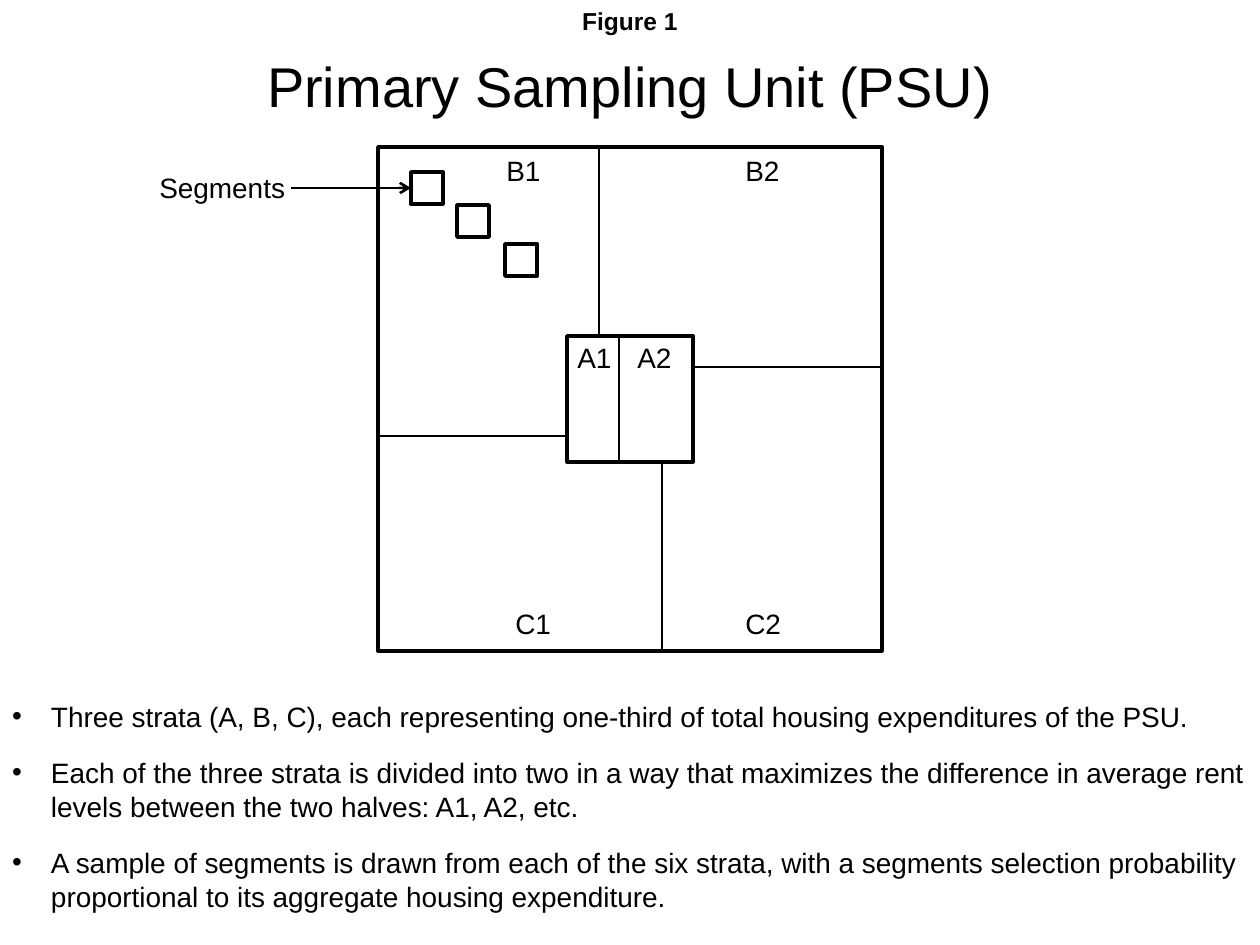
"""Build the Figure 1 slide: a primary sampling unit divided into strata and segments."""
import pptx
import pptx.dml.color
import pptx.enum.shapes
import pptx.enum.text
import pptx.oxml.ns
import pptx.util
from lxml import etree

BLACK = pptx.dml.color.RGBColor(0, 0, 0)
FONT = "Arial"
PX = 914400 / 126
ALIGN = pptx.enum.text.PP_ALIGN

FIGURE = ("Figure 1", (0, 0, 1260, 42))
TITLE = ("Primary Sampling Unit (PSU)", (0, 45, 1260, 79))
NOTES_BOX = (0, 693, 1260, 229)
NOTES = [
    "Three strata (A, B, C), each representing one-third of total housing expenditures of the PSU.",
    "Each of the three strata is divided into two in a way that maximizes the difference "
    "in average rent levels between the two halves: A1, A2, etc.",
    "A sample of segments is drawn from each of the six strata, with a segments selection "
    "probability proportional to its aggregate housing expenditure.",
]
NOTE_INDENT = 39

UNIT = (378, 147, 504, 504)
CORE = (567, 336, 126, 126)
SEGMENT_SIZE = 32
SEGMENT_CORNERS = [(411, 172), (457, 205), (505, 244)]
DIVIDERS = [
    (599, 147, 599, 336),
    (662, 462, 662, 651),
    (882, 367, 693, 367),
    (567, 436, 378, 436),
    (619, 336, 619, 462),
]
LABEL_HEIGHT = 47
LABELS = [
    ("Segments", 147, 164, 178),
    ("B1", 494, 147, 74),
    ("B2", 733, 147, 62),
    ("C2", 733, 600, 62),
    ("C1", 503, 600, 62),
    ("A1", 565, 334, 62),
    ("A2", 625, 334, 62),
]
ARROW_START = 291


def px(*lengths):
    return [round(length * PX) for length in lengths]


def write(shape, box, lines, size=16, bold=False, align=ALIGN.LEFT, gap=0):
    shape.left, shape.top, shape.width, shape.height = px(*box)
    frame = shape.text_frame
    frame.word_wrap = True
    frame.auto_size = pptx.enum.text.MSO_AUTO_SIZE.NONE
    frame.vertical_anchor = pptx.enum.text.MSO_ANCHOR.TOP
    frame.text = "\n".join(lines)
    for index, paragraph in enumerate(frame.paragraphs):
        paragraph.alignment = align
        paragraph.space_before = pptx.util.Pt(gap if index else 0)
        font = paragraph.runs[0].font
        font.name, font.size, font.bold = FONT, pptx.util.Pt(size), bold
        font.color.rgb = BLACK
    return frame


def add_box(shapes, box):
    rectangle = shapes.add_shape(pptx.enum.shapes.MSO_SHAPE.RECTANGLE, *px(*box))
    rectangle.shadow.inherit = False
    rectangle.fill.background()
    rectangle.line.color.rgb = BLACK
    rectangle.line.width = pptx.util.Pt(2)
    return rectangle


def add_line(shapes, ends):
    line = shapes.add_connector(pptx.enum.shapes.MSO_CONNECTOR.STRAIGHT, *px(*ends))
    line.line.color.rgb = BLACK
    line.line.width = pptx.util.Pt(1.5)
    etree.SubElement(line._element.spPr, pptx.oxml.ns.qn("a:effectLst"))
    return line


def add_bullets(frame):
    for paragraph in frame.paragraphs:
        properties = paragraph._p.get_or_add_pPr()
        indent = px(NOTE_INDENT)[0]
        properties.set("marL", str(indent))
        properties.set("indent", str(-indent))
        etree.SubElement(properties, pptx.oxml.ns.qn("a:buFont"), typeface=FONT)
        etree.SubElement(properties, pptx.oxml.ns.qn("a:buChar"), char="•")


def main():
    deck = pptx.Presentation()
    deck.slide_width, deck.slide_height = px(1260, 945)
    slide = deck.slides.add_slide(deck.slide_layouts[1])
    shapes = slide.shapes

    title, title_box = TITLE
    write(shapes.title, title_box, [title], size=32, align=ALIGN.CENTER)
    notes = write(slide.placeholders[1], NOTES_BOX, NOTES, gap=13)
    notes.margin_left = notes.margin_right = px(12)[0]
    add_bullets(notes)

    caption, caption_box = FIGURE
    write(shapes.add_textbox(0, 0, 0, 0), caption_box, [caption],
          size=14, bold=True, align=ALIGN.CENTER)

    for box in (UNIT, CORE):
        add_box(shapes, box)
    for ends in DIVIDERS:
        add_line(shapes, ends)
    segments = [add_box(shapes, (left, top, SEGMENT_SIZE, SEGMENT_SIZE))
                for left, top in SEGMENT_CORNERS]

    left, top = SEGMENT_CORNERS[0]
    middle = top + SEGMENT_SIZE // 2
    arrow = add_line(shapes, (ARROW_START, middle, left, middle))
    arrow.end_connect(segments[0], 1)
    etree.SubElement(arrow.line._get_or_add_ln(), pptx.oxml.ns.qn("a:tailEnd"), type="arrow")

    for label, left, top, width in LABELS:
        write(shapes.add_textbox(0, 0, 0, 0), (left, top, width, LABEL_HEIGHT), [label])

    deck.save("out.pptx")


if __name__ == "__main__":
    main()
